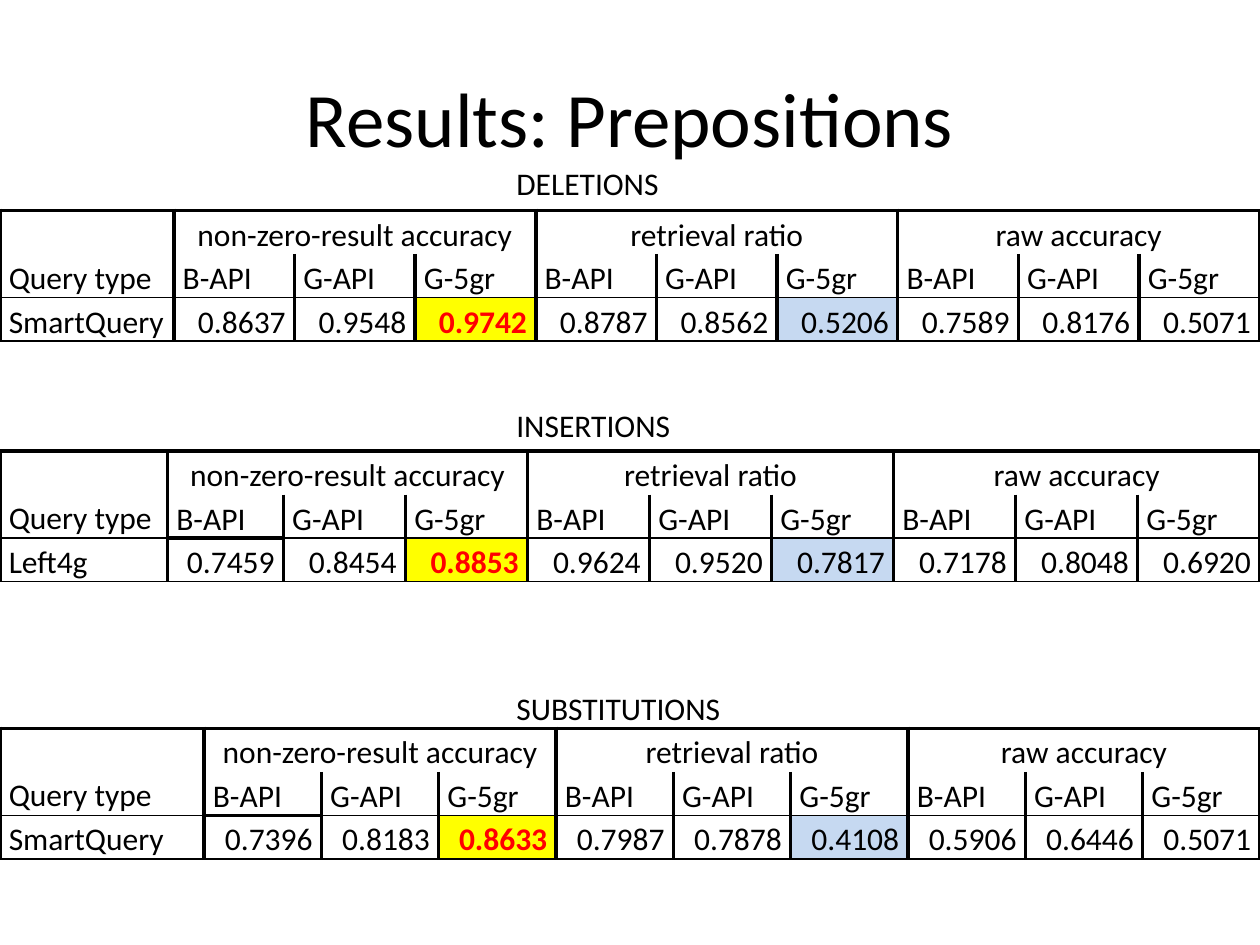
from pptx import Presentation
from pptx.dml.color import RGBColor
from pptx.enum import text as t
from pptx.oxml import parse_xml
from pptx.oxml.ns import nsdecls
from pptx.util import Inches, Pt

BLACK = RGBColor(0x00, 0x00, 0x00)
RED = RGBColor(0xFF, 0x00, 0x00)
YELLOW = RGBColor(0xFF, 0xFF, 0x00)
PALE_BLUE = RGBColor(0xC6, 0xD9, 0xF1)

FONT = "Calibri"
THICK, THIN = 2.25, 1
SLIDE_WIDTH, SLIDE_HEIGHT = 10, 7.5
TABLE_HEIGHT = 1.03
NO_GRID_STYLE = "{2D5ABB26-0587-4C30-8999-92F81FD0307C}"
BEST_COLUMN, LOWEST_COLUMN = 3, 6

TITLE = "Results: Prepositions"
MEASURES = ["non-zero-result accuracy", "retrieval ratio", "raw accuracy"]
ENGINES = ["B-API", "G-API", "G-5gr"]
RESULTS = [
    {"heading": "DELETIONS", "heading_box": (4, 1.25, 1.34, 0.4), "top": 1.67,
     "lead_widths": [1.38], "first_engine_rule": THIN, "query": "SmartQuery",
     "scores": ["0.8637", "0.9548", "0.9742", "0.8787", "0.8562", "0.5206",
                "0.7589", "0.8176", "0.5071"]},
    {"heading": "INSERTIONS", "heading_box": (4, 3.17, 1.43, 0.4), "top": 3.58,
     "lead_widths": [1.33, 0.92], "first_engine_rule": THICK, "query": "Left4g",
     "scores": ["0.7459", "0.8454", "0.8853", "0.9624", "0.9520", "0.7817",
                "0.7178", "0.8048", "0.6920"]},
    {"heading": "SUBSTITUTIONS", "heading_box": (4, 5.42, 1.83, 0.4), "top": 5.78,
     "lead_widths": [1.62], "first_engine_rule": THICK, "query": "SmartQuery",
     "scores": ["0.7396", "0.8183", "0.8633", "0.7987", "0.7878", "0.4108",
                "0.5906", "0.6446", "0.5071"]},
]

CELL_FORMAT = {
    "margin_left": Inches(0.07), "margin_right": Inches(0.07),
    "margin_top": 0, "margin_bottom": 0,
    "vertical_anchor": t.MSO_ANCHOR.BOTTOM,
}


def write(frame, words, size=18, color=BLACK, bold=False,
          align=t.PP_ALIGN.LEFT, spacing=None):
    paragraph = frame.paragraphs[0]
    paragraph.alignment = align
    paragraph.line_spacing = spacing
    run = paragraph.add_run()
    run.text = words
    for name, value in {"name": FONT, "size": Pt(size), "bold": bold}.items():
        setattr(run.font, name, value)
    run.font.color.rgb = color


def add_label(slide, box, words, wrap=False, anchor=t.MSO_ANCHOR.TOP, **style):
    frame = slide.shapes.add_textbox(*map(Inches, box)).text_frame
    frame.word_wrap = wrap
    frame.vertical_anchor = anchor
    write(frame, words, **style)


def set_borders(cell, edges):
    properties = cell._tc.get_or_add_tcPr()
    for position, edge in enumerate("LRTB"):
        width = edges.get(edge)
        paint = ("<a:noFill/>" if width is None else
                 f'<a:solidFill><a:srgbClr val="{BLACK}"/></a:solidFill>')
        properties.insert(position, parse_xml(
            f'<a:ln{edge} {nsdecls("a")} w="{Pt(width or 0)}">{paint}</a:ln{edge}>'))


def row_edges(row, column, first_engine_rule):
    engine_rule = first_engine_rule if column == 1 else THIN
    edges = {"L": THICK, "R": THICK}
    if row == 0:
        edges["T"] = THICK
    else:
        edges["B"] = engine_rule if row == 1 else THIN
    if row == 2:
        edges["T"] = engine_rule
    if row == 0 and column == 0:
        edges["B"] = THIN
    return edges


def add_results(slide, result):
    measure_row = [""] * 10
    measure_row[1::len(ENGINES)] = MEASURES
    measure_row[0] = "Query type"
    rows = [measure_row, [""] + ENGINES * len(MEASURES),
            [result["query"]] + result["scores"]]
    table = slide.shapes.add_table(
        len(rows), len(measure_row), 0, Inches(result["top"]),
        Inches(SLIDE_WIDTH), Inches(TABLE_HEIGHT)).table
    table.first_row = table.horz_banding = False
    table._tbl.tblPr[0].text = NO_GRID_STYLE

    lead = result["lead_widths"]
    rest = len(measure_row) - len(lead)
    widths = lead + [(SLIDE_WIDTH - sum(lead)) / rest] * rest
    for column, width in zip(table.columns, widths):
        column.width = Inches(width)

    aligns = [t.PP_ALIGN.CENTER, t.PP_ALIGN.LEFT, t.PP_ALIGN.RIGHT]
    for r, words_row in enumerate(rows):
        for c, words in enumerate(words_row):
            cell = table.cell(r, c)
            for name, value in CELL_FORMAT.items():
                setattr(cell, name, value)
            best = r == 2 and c == BEST_COLUMN
            if best or (r == 2 and c == LOWEST_COLUMN):
                cell.fill.solid()
                cell.fill.fore_color.rgb = YELLOW if best else PALE_BLUE
            else:
                cell.fill.background()
            set_borders(cell, row_edges(r, c, result["first_engine_rule"]))
            if words:
                write(cell.text_frame, words, color=RED if best else BLACK, bold=best,
                      align=aligns[r] if c else t.PP_ALIGN.LEFT, spacing=1.15)

    table.cell(0, 0).merge(table.cell(1, 0))
    for start in range(1, len(measure_row), len(ENGINES)):
        table.cell(0, start).merge(table.cell(0, start + len(ENGINES) - 1))


def main():
    deck = Presentation()
    deck.slide_width, deck.slide_height = Inches(SLIDE_WIDTH), Inches(SLIDE_HEIGHT)
    slide = deck.slides.add_slide(deck.slide_layouts[6])
    add_label(slide, (0.5, 0.3, 9, 1.25), TITLE, wrap=True,
              anchor=t.MSO_ANCHOR.MIDDLE, size=44, align=t.PP_ALIGN.CENTER)
    for result in RESULTS:
        add_results(slide, result)
    for result in RESULTS:
        add_label(slide, result["heading_box"], result["heading"])
    deck.save("out.pptx")


if __name__ == "__main__":
    main()
